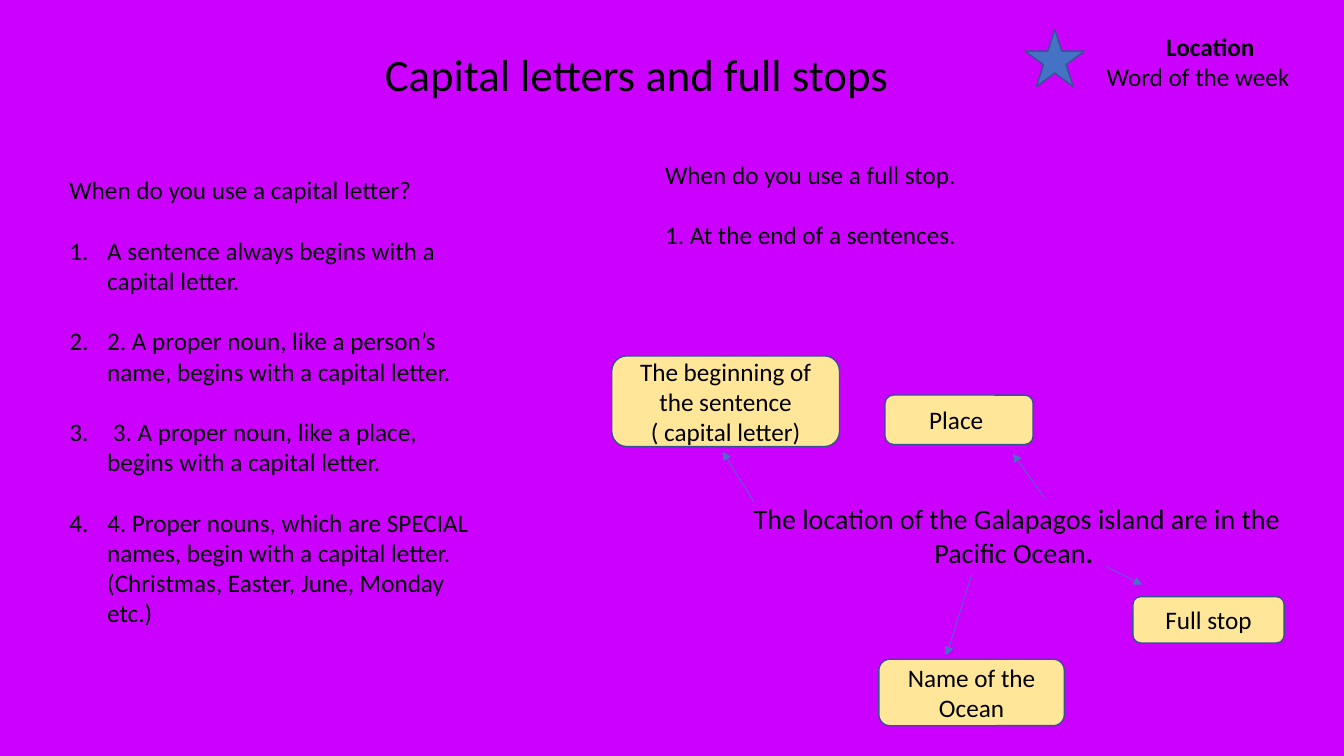
from lxml.etree import SubElement
from pptx import Presentation
from pptx.dml.color import RGBColor
from pptx.enum.shapes import MSO_CONNECTOR, MSO_SHAPE
from pptx.enum.text import MSO_ANCHOR, PP_ALIGN
from pptx.oxml.ns import qn
from pptx.util import Pt


def paint(color_format, hex_color):
    color_format.rgb = RGBColor.from_string(hex_color)


def write(frame, text, size=18, align=PP_ALIGN.LEFT, bold=False, gap=0, numbered=False, same_line=False):
    frame.word_wrap = True
    paragraph = frame.paragraphs[-1]
    if paragraph.runs and not same_line:
        paragraph = frame.add_paragraph()
    if not same_line:
        paragraph.alignment = align
        paragraph.space_before = Pt(gap)
    if numbered:
        properties = paragraph._p.get_or_add_pPr()
        properties.set("marL", str(Pt(27)))
        properties.set("indent", str(Pt(-27)))
        SubElement(properties, qn("a:buFont"), typeface="+mj-lt")
        SubElement(properties, qn("a:buAutoNum"), type="arabicPeriod")
    run = paragraph.add_run()
    run.text = text
    run.font.name = "Calibri"
    run.font.size = Pt(size)
    run.font.bold = bold
    paint(run.font.color, "000000")


LINE_GAP = 21.6

presentation = Presentation()
presentation.slide_width = Pt(960)
presentation.slide_height = Pt(540)
slide = presentation.slides.add_slide(presentation.slide_layouts[6])
slide.background.fill.solid()
paint(slide.background.fill.fore_color, "CC00FF")
shapes = slide.shapes

title = shapes.add_textbox(Pt(267.8), Pt(29.5), Pt(568.8), Pt(46)).text_frame
write(title, "Capital letters and full stops", size=32)

capital_rules = shapes.add_textbox(Pt(42.5), Pt(121), Pt(306.7), Pt(334)).text_frame
write(capital_rules, "When do you use a capital letter?")
for rule in (
    "A sentence always begins with a capital letter.",
    "2. A proper noun, like a person’s name, begins with a capital letter.",
    " 3. A proper noun, like a place, begins with a capital letter.",
    "4. Proper nouns, which are SPECIAL names, begin with a capital letter. (Christmas, Easter, June, Monday etc.)",
):
    write(capital_rules, rule, gap=LINE_GAP, numbered=True)

full_stop_rules = shapes.add_textbox(Pt(468), Pt(110.2), Pt(342), Pt(72.7)).text_frame
write(full_stop_rules, "When do you use a full stop.")
write(full_stop_rules, "1. At the end of a sentences.", gap=LINE_GAP)

example = shapes.add_textbox(Pt(516.2), Pt(355), Pt(420.5), Pt(55.4)).text_frame
write(example, "The location of the Galapagos island are in the Pacific Ocean", size=20, align=PP_ALIGN.CENTER)
write(example, ". ", size=20, bold=True, same_line=True)

for start_x, start_y, end_x, end_y in (
    (694.1, 410.4, 676.1, 468),
    (538.6, 358.6, 516.2, 322.6),
    (746.6, 356.4, 723.6, 324),
    (789.8, 404.6, 815.8, 417.6),
):
    arrow = shapes.add_connector(MSO_CONNECTOR.STRAIGHT, Pt(start_x), Pt(start_y), Pt(end_x), Pt(end_y))
    arrow.line.width = Pt(0.5)
    paint(arrow.line.color, "4472C4")
    SubElement(arrow.line._get_or_add_ln(), qn("a:tailEnd"), type="triangle")
    SubElement(arrow._element.spPr, qn("a:effectLst"))

for kind, fill, left, top, width, height, lines in (
    (MSO_SHAPE.ROUNDED_RECTANGLE, "FFE699", 627.8, 470.9, 132.5, 47.5, ["Name of the Ocean"]),
    (MSO_SHAPE.ROUNDED_RECTANGLE, "FFE699", 632.2, 282.2, 105.8, 35.3, ["Place "]),
    (MSO_SHAPE.ROUNDED_RECTANGLE, "FFE699", 437, 254.2, 162.7, 64.8,
     ["The beginning of the sentence", "( capital letter)"]),
    (MSO_SHAPE.ROUNDED_RECTANGLE, "FFE699", 809.3, 426.2, 108, 33.1, ["Full stop"]),
    (MSO_SHAPE.STAR_5_POINT, "4472C4", 732.2, 20.9, 42.5, 41, []),
):
    label = shapes.add_shape(kind, Pt(left), Pt(top), Pt(width), Pt(height))
    label.shadow.inherit = False
    label.fill.solid()
    paint(label.fill.fore_color, fill)
    label.line.width = Pt(1)
    paint(label.line.color, "325491")
    label.text_frame.vertical_anchor = MSO_ANCHOR.MIDDLE
    for line in lines:
        write(label.text_frame, line, align=PP_ALIGN.CENTER)

weekly_word = shapes.add_textbox(Pt(783.4), Pt(18.7), Pt(166.3), Pt(51)).text_frame
write(weekly_word, "Location ", align=PP_ALIGN.CENTER, bold=True)
write(weekly_word, "Word of the week")

presentation.save("out.pptx")
